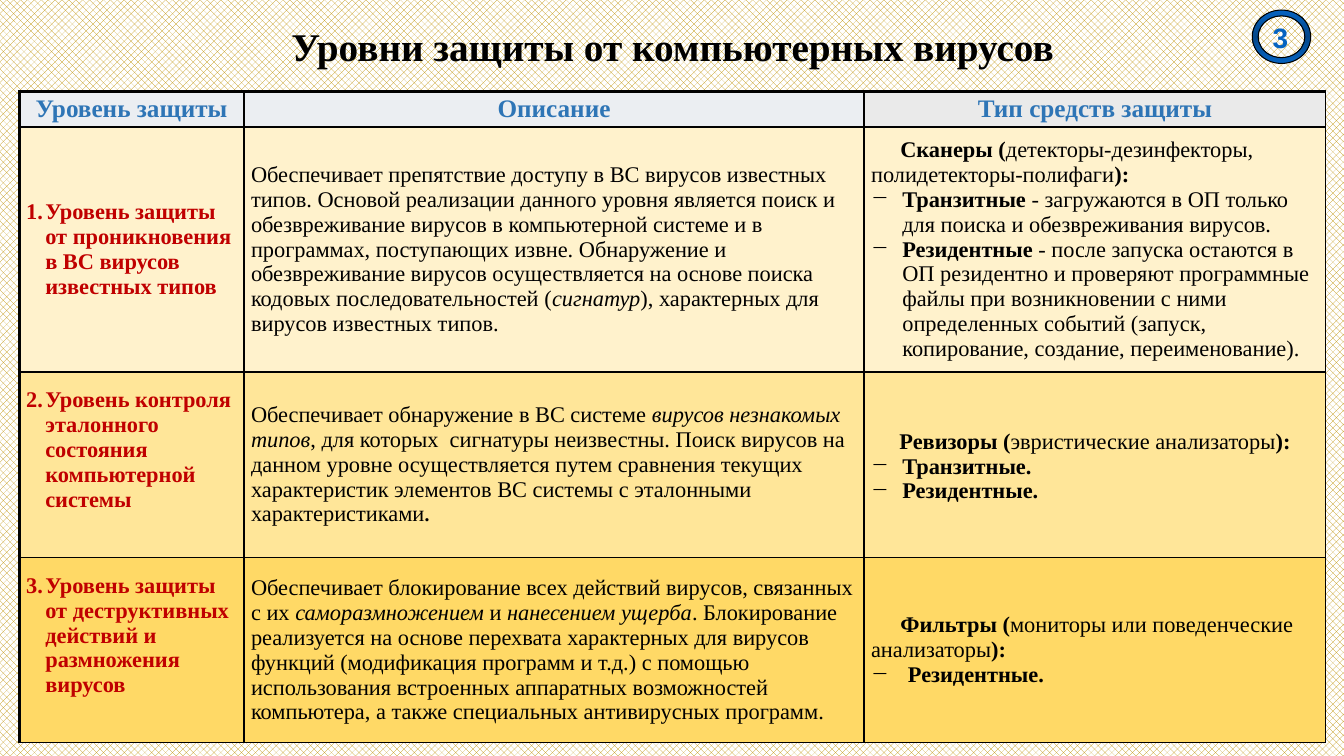
import copy

import pptx
import pptx.dml.color
import pptx.enum.dml
import pptx.enum.shapes
import pptx.enum.text
import pptx.oxml.ns
import pptx.util
from lxml import etree

Inches, Pt = pptx.util.Inches, pptx.util.Pt
rgb = pptx.dml.color.RGBColor.from_string
qn = pptx.oxml.ns.qn
CENTER = pptx.enum.text.PP_ALIGN.CENTER
MIDDLE = pptx.enum.text.MSO_ANCHOR.MIDDLE

SERIF = "Times New Roman"
BLACK, BLUE, RED, HEADING = "000000", "0563C1", "C00000", "2E75B6"
PLAIN = {"bold": False}
BOLD = {"bold": True}
ITALIC = {"bold": False, "italic": True}
STOP = {"bold": True, "size": Pt(14)}


def write(paragraph, runs, size, colour, font=SERIF):
    """Add (text, format) runs that share a size, colour and font."""
    for text, style in runs:
        run = paragraph.add_run()
        run.text = text
        run.font.color.rgb = rgb(colour)
        for key, value in {"name": font, "size": Pt(size), **style}.items():
            setattr(run.font, key, value)


def indent(paragraph, left, first, bullet=None, **bullet_values):
    """Set the indents in inches and, if named, the bullet element."""
    properties = paragraph._p.get_or_add_pPr()
    properties.set("marL", str(Inches(left)))
    properties.set("indent", str(Inches(first)))
    if bullet:
        etree.SubElement(properties, qn(bullet), bullet_values)


headings = ["Уровень защиты", "Описание", "Тип средств защиты"]
header_fills = ["EBEEF2", "EBEEF2", "EAEAEA"]

# Each level: fill, name, description runs, heading of the tools, listed tools
levels = [
    (
        "FFF2CC",
        "Уровень защиты от проникновения в ВС вирусов известных типов",
        [
            ("Обеспечивает препятствие доступу в ВС вирусов известных типов. "
             "Основой реализации данного уровня является поиск и обезвреживание "
             "вирусов в компьютерной системе и в программах, поступающих извне. "
             "Обнаружение и обезвреживание вирусов осуществляется на основе "
             "поиска кодовых последовательностей (", PLAIN),
            ("сигнатур", ITALIC),
            ("), характерных для вирусов известных типов.", PLAIN),
        ],
        ("Сканеры (", "детекторы-дезинфекторы, полидетекторы-полифаги"),
        [
            ("Транзитные", " - загружаются в ОП только для поиска и "
             "обезвреживания вирусов."),
            ("Резидентные", " - после запуска остаются в ОП резидентно и "
             "проверяют программные файлы при возникновении с ними определенных "
             "событий (запуск, копирование, создание, переименование)."),
        ],
    ),
    (
        "FFE699",
        "Уровень контроля эталонного состояния компьютерной системы",
        [
            ("Обеспечивает обнаружение в ВС системе ", PLAIN),
            ("вирусов незнакомых типов", ITALIC),
            (", для которых  сигнатуры неизвестны. Поиск вирусов на данном "
             "уровне осуществляется путем сравнения текущих характеристик "
             "элементов ВС системы с эталонными характеристиками", PLAIN),
            (".", STOP),
        ],
        ("Ревизоры (", "эвристические анализаторы"),
        [("Транзитные.", ""), ("Резидентные.", "")],
    ),
    (
        "FFD966",
        "Уровень защиты от деструктивных действий и размножения вирусов",
        [
            ("Обеспечивает блокирование всех действий вирусов, связанных с их ",
             PLAIN),
            ("саморазмножением", ITALIC),
            (" и ", PLAIN),
            ("нанесением ущерба", ITALIC),
            (". Блокирование реализуется на основе перехвата характерных для "
             "вирусов функций (модификация программ и т.д.) с помощью "
             "использования встроенных аппаратных возможностей компьютера, а "
             "также специальных антивирусных программ.", PLAIN),
        ],
        ("Фильтры (", "мониторы или поведенческие анализаторы"),
        [(" Резидентные.", "")],
    ),
]

deck = pptx.Presentation()
deck.slide_width, deck.slide_height = Inches(13.33), Inches(7.5)
slide = deck.slides.add_slide(deck.slide_layouts[6])
backdrop = slide.background.fill
backdrop.patterned()
backdrop.pattern = pptx.enum.dml.MSO_PATTERN.PERCENT_50
backdrop.fore_color.rgb = rgb("BF9000")
backdrop.back_color.rgb = rgb("FFFFFF")

# Page number ring
ring = slide.shapes.add_shape(
    pptx.enum.shapes.MSO_SHAPE.DONUT,
    Inches(12.42), Inches(0.1), Inches(0.58), Inches(0.53))
ring.adjustments[0] = 0.11
ring.shadow.inherit = False
ring.line.color.rgb = rgb(BLACK)
ring.line.width = Pt(0.75)
ring.fill.gradient()
ring.fill.gradient_angle = 90
stops = ring._element.spPr.find(qn("a:gradFill")).find(qn("a:gsLst"))
stops.append(copy.deepcopy(stops[0]))
for stop, position, colour in zip(
        ring.fill.gradient_stops, (0, 0.5, 1), (BLUE, "04478A", BLUE)):
    stop.position = position
    stop.color.rgb = rgb(colour)

# Title and page number
for text, box, size, colour, font, spacing in [
    ("Уровни защиты от компьютерных вирусов", (0.92, 0.2, 11.5, 0.57),
     28, BLACK, SERIF, 0.9),
    ("3", (12.54, 0.2, 0.32, 0.34), 20, BLUE, "Arial", 1.0),
]:
    frame = slide.shapes.add_textbox(*map(Inches, box)).text_frame
    for key, value in {"word_wrap": True, "vertical_anchor": MIDDLE,
                       "margin_left": 0, "margin_right": 0,
                       "margin_top": 0, "margin_bottom": 0}.items():
        setattr(frame, key, value)
    line = frame.paragraphs[0]
    line.alignment = CENTER
    line.line_spacing = spacing
    write(line, [(text, BOLD)], size, colour, font)

# Table grid: sizes, borders, margins and fills
column_widths = [2.23, 6.15, 4.58]
row_heights = [0.35, 2.43, 1.84, 1.84]
table = slide.shapes.add_table(
    len(row_heights), len(column_widths), Inches(0.19), Inches(0.91),
    Inches(sum(column_widths)), Inches(sum(row_heights))).table
table.first_row = table.horz_banding = False
for column, width in zip(table.columns, column_widths):
    column.width = Inches(width)
for row, height in zip(table.rows, row_heights):
    row.height = Inches(height)

for r in range(len(row_heights)):
    for c in range(len(column_widths)):
        cell = table.cell(r, c)
        cell.vertical_anchor = MIDDLE
        cell.margin_top = cell.margin_bottom = 0
        cell.margin_left = cell.margin_right = Inches(0.07 if r else 0)
        borders = {"a:lnL": 1 if c else 2.25, "a:lnR": 1,
                   "a:lnT": 1 if r else 2.25, "a:lnB": 1}
        for side, width in borders.items():
            border = etree.SubElement(
                cell._tc.get_or_add_tcPr(), qn(side), w=str(Pt(width)))
            ink = etree.SubElement(border, qn("a:solidFill"))
            etree.SubElement(ink, qn("a:srgbClr"), val=BLACK)
        cell.fill.solid()
        cell.fill.fore_color.rgb = rgb(levels[r - 1][0] if r else header_fills[c])

for c, heading in enumerate(headings):
    line = table.cell(0, c).text_frame.paragraphs[0]
    line.alignment = CENTER
    write(line, [(heading, BOLD)], 18, HEADING)

for number, (_, level, description, (family, members), tools) in enumerate(levels, 1):
    level_cell, description_cell, tools_cell = table.rows[number].cells
    if number > 1:
        level_cell.margin_bottom = Inches(0.29)
    line = level_cell.text_frame.paragraphs[0]
    indent(line, 0.19, -0.19, "a:buAutoNum", type="arabicPeriod", startAt=str(number))
    write(line, [(level, BOLD)], 16, RED)

    write(description_cell.text_frame.paragraphs[0], description, 16, BLACK)

    line = tools_cell.text_frame.paragraphs[0]
    if number == 2:
        line.alignment = CENTER
        line.line_spacing = 1.15
    else:
        indent(line, 0, 0.29)
    write(line, [(family, BOLD), (members, PLAIN), ("):", BOLD)], 16, BLACK)
    for tool, action in tools:
        line = tools_cell.text_frame.add_paragraph()
        indent(line, 0.31, -0.31, "a:buChar", char="−")
        write(line, [(tool, BOLD)] + ([(action, PLAIN)] if action else []), 16, BLACK)

deck.save("out.pptx")
